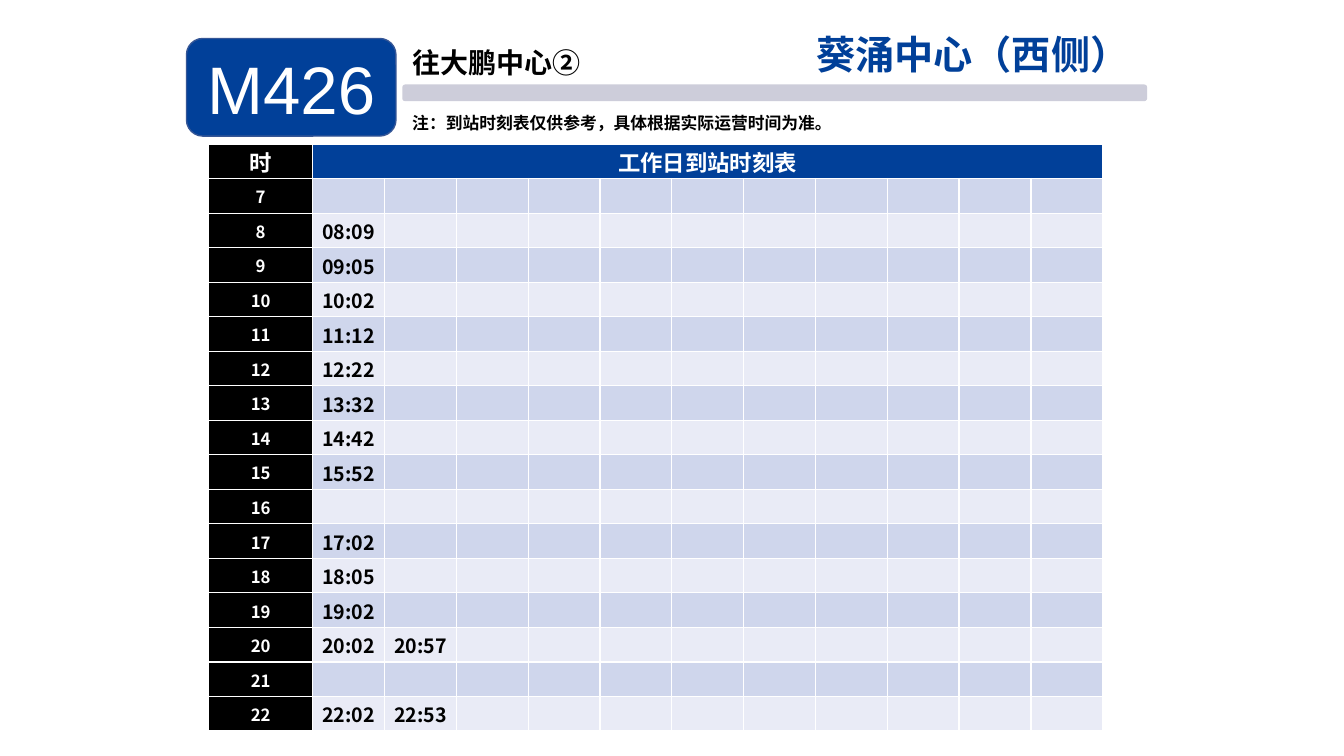
from lxml import etree
from pptx import Presentation
from pptx import util as u
from pptx.dml.color import RGBColor
from pptx.enum import shapes, text
from pptx.oxml import ns

BLUE = RGBColor(0x01, 0x40, 0x99)
BLUE_EDGE = RGBColor(0x35, 0x56, 0x96)
GREY = RGBColor(0xCD, 0xCD, 0xDA)
BLACK = RGBColor(0, 0, 0)
WHITE = RGBColor(0xFF, 0xFF, 0xFF)
BANDS = (RGBColor(0xCF, 0xD6, 0xEC), RGBColor(0xE9, 0xEB, 0xF6))

SANS = "Noto Sans CJK SC"
LATIN = "Arial"

HOURS = range(7, 23)
TIME_COLUMNS = 11
ARRIVALS = {
    8: ["08:09"], 9: ["09:05"], 10: ["10:02"], 11: ["11:12"],
    12: ["12:22"], 13: ["13:32"], 14: ["14:42"], 15: ["15:52"],
    17: ["17:02"], 18: ["18:05"], 19: ["19:02"],
    20: ["20:02", "20:57"], 22: ["22:02", "22:53"],
}


class StopSign:
    """Holds the slide and the style of a bus stop timetable."""

    def __init__(self, slide):
        self.slide = slide

    def set_words(self, frame, words, size, color, bold=True, font=SANS,
                  align=text.PP_ALIGN.CENTER):
        frame.text = words
        paragraph = frame.paragraphs[0]
        paragraph.alignment = align
        run = paragraph.runs[0]
        run.font.size = u.Pt(size)
        run.font.bold = bold
        run.font.name = font
        run.font.color.rgb = color
        properties = run._r.get_or_add_rPr()
        east_asian = etree.SubElement(properties, ns.qn("a:ea"))
        east_asian.set("typeface", SANS)

    def rounded_box(self, left, top, width, height, fill, edge=None):
        box = self.slide.shapes.add_shape(
            shapes.MSO_SHAPE.ROUNDED_RECTANGLE,
            u.Cm(left), u.Cm(top), u.Cm(width), u.Cm(height))
        box.shadow.inherit = False
        box.fill.solid()
        box.fill.fore_color.rgb = fill
        if edge is None:
            box.line.fill.background()
        else:
            box.line.color.rgb = edge
            box.line.width = u.Pt(1)
        return box

    def text_box(self, left, top, width, height):
        box = self.slide.shapes.add_textbox(
            u.Cm(left), u.Cm(top), u.Cm(width), u.Cm(height))
        box.text_frame.word_wrap = True
        return box.text_frame

    def label(self, left, top, width, height, words, size):
        frame = self.text_box(left, top, width, height)
        frame.margin_left = frame.margin_right = frame.margin_bottom = 0
        frame.margin_top = u.Cm(0.03)
        frame.auto_size = text.MSO_AUTO_SIZE.SHAPE_TO_FIT_TEXT
        self.set_words(frame, words, size, BLACK, align=text.PP_ALIGN.LEFT)
        frame.paragraphs[0].space_before = u.Pt(1)

    def cell(self, cell, fill, words="", size=14, color=WHITE):
        cell.fill.solid()
        cell.fill.fore_color.rgb = fill
        cell.margin_left = cell.margin_right = cell.margin_top = u.Cm(0.03)
        cell.margin_bottom = 0
        cell.vertical_anchor = text.MSO_ANCHOR.MIDDLE
        if words:
            self.set_words(cell.text_frame, words, size, color)

    def timetable(self, left, top, hour_width, time_width, row_height):
        table = self.slide.shapes.add_table(
            len(HOURS) + 1, TIME_COLUMNS + 1, u.Cm(left), u.Cm(top),
            u.Cm(hour_width + TIME_COLUMNS * time_width),
            u.Cm(row_height * (len(HOURS) + 1))).table
        for index, column in enumerate(table.columns):
            column.width = u.Cm(time_width if index else hour_width)
        for row in table.rows:
            row.height = u.Cm(row_height)

        # Header row
        table.cell(0, 1).merge(table.cell(0, TIME_COLUMNS))
        self.cell(table.cell(0, 0), BLACK, "时", 16)
        self.cell(table.cell(0, 1), BLUE, "工作日到站时刻表", 16)

        # One row per hour
        for row, hour in enumerate(HOURS, start=1):
            self.cell(table.cell(row, 0), BLACK, str(hour), 12)
            times = ARRIVALS.get(hour, [])
            for column in range(TIME_COLUMNS):
                words = times[column] if column < len(times) else ""
                self.cell(table.cell(row, column + 1), BANDS[(row - 1) % 2],
                          words, 14, BLACK)


def main():
    presentation = Presentation()
    presentation.slide_width = u.Cm(33.87)
    presentation.slide_height = u.Cm(19.05)
    slide = presentation.slides.add_slide(presentation.slide_layouts[6])
    sign = StopSign(slide)

    # Divider and route badge
    divider = sign.rounded_box(10.14, 2.13, 18.77, 0.42, GREY)
    divider.adjustments[0] = 0.17
    badge = sign.rounded_box(4.7, 0.97, 5.28, 2.46, BLUE, BLUE_EDGE)
    badge.text_frame.vertical_anchor = text.MSO_ANCHOR.MIDDLE
    sign.set_words(badge.text_frame, "M426", 48, WHITE, bold=False, font=LATIN)

    # Direction, note and stop name
    sign.label(10.39, 1.12, 8.71, 0.89, "往大鹏中心②", 20)
    sign.label(10.39, 2.82, 10.64, 0.56,
               "注：到站时刻表仅供参考，具体根据实际运营时间为准。", 12)
    stop_name = sign.text_box(19.69, 0.64, 9.02, 1.4)
    sign.set_words(stop_name, "葵涌中心（西侧）", 28, BLUE, font=LATIN,
                   align=text.PP_ALIGN.RIGHT)

    # Timetable
    sign.timetable(5.26, 3.63, hour_width=2.62, time_width=1.81,
                   row_height=0.87)

    presentation.save("out.pptx")


if __name__ == "__main__":
    main()
